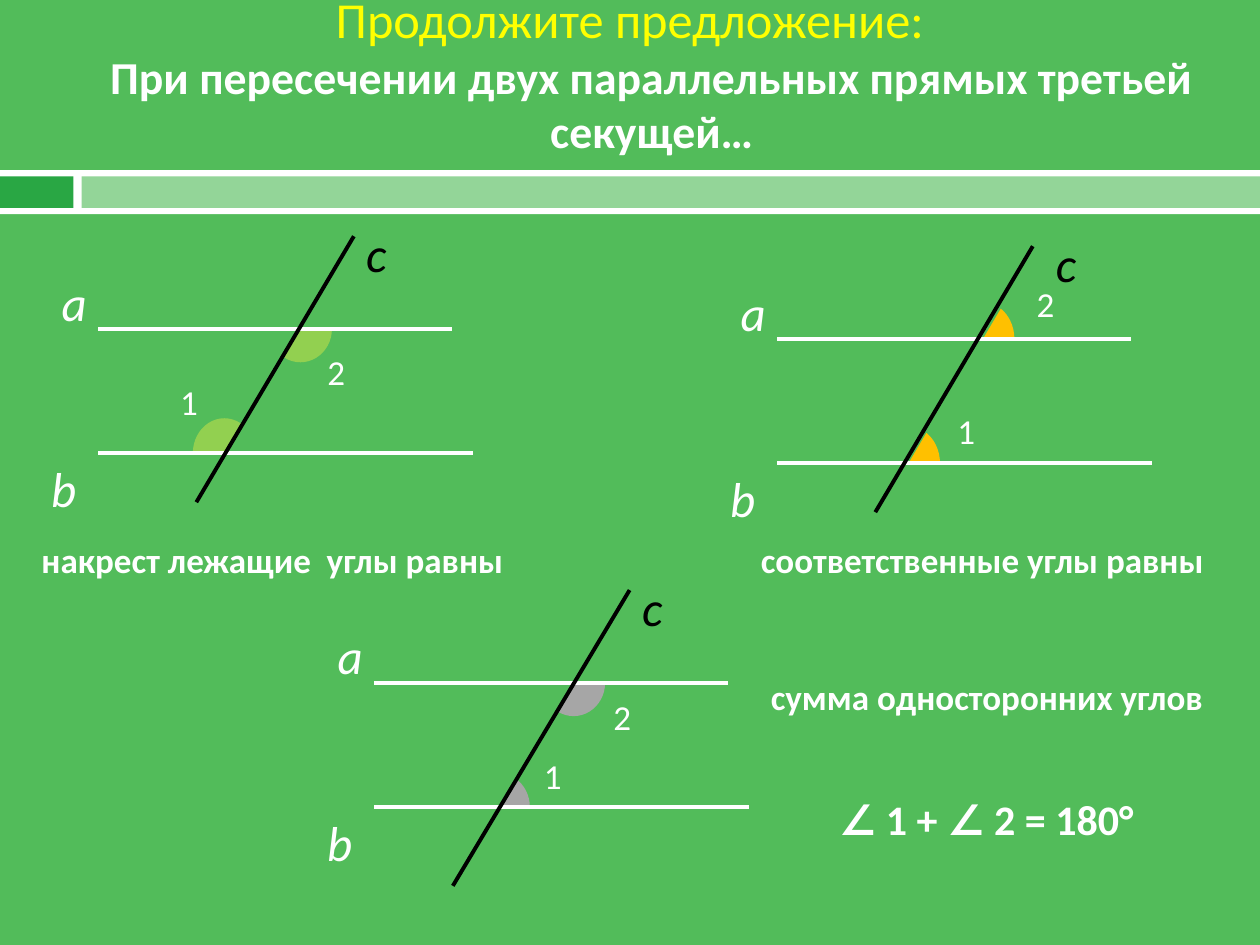
import dataclasses
import math

import pptx
import pptx.dml.color
import pptx.enum.shapes
import pptx.enum.text
import pptx.oxml.ns
import pptx.util
from lxml import etree

Pt = pptx.util.Pt


@dataclasses.dataclass(frozen=True)
class Theme:
    """Colours, font and type sizes of the slide."""
    background: str = "52BC5A"
    white: str = "FFFFFF"
    black: str = "000000"
    yellow: str = "FFFF00"
    dark_green: str = "29A744"
    pale_green: str = "93D598"
    lime: str = "92D050"
    orange: str = "FFC000"
    grey: str = "A6A6A6"
    font: str = "Calibri"
    title_size: float = 28.8
    statement_size: float = 26.1
    line_name_size: float = 28
    formula_size: float = 24
    text_size: float = 20
    line_width: float = 2.25


THEME = Theme()


@dataclasses.dataclass(frozen=True)
class Angle:
    """A marked angle: number, label position, vertex, radii and arc ends."""
    number: str
    label: tuple
    vertex: tuple
    radii: tuple
    ends: tuple


def color(value):
    """Turn a hex string into a colour."""
    return pptx.dml.color.RGBColor.from_string(value)


def apply_format(target, values):
    """Set each attribute named in a dict of format values."""
    for name, value in values.items():
        setattr(target, name, value)


def format_font(font, size, fill, **extra):
    """Give a font the theme typeface, a size, a colour and extra attributes."""
    apply_format(font, {"name": THEME.font, "size": Pt(size), "bold": False, **extra})
    font.color.rgb = color(fill)


def add_text(slide, text, box, size, fill=THEME.white, **extra):
    """Add a one-paragraph text box."""
    shape = slide.shapes.add_textbox(*map(Pt, box))
    apply_format(shape.text_frame, {
        "word_wrap": True,
        "auto_size": pptx.enum.text.MSO_AUTO_SIZE.SHAPE_TO_FIT_TEXT})
    run = shape.text_frame.paragraphs[0].add_run()
    run.text = text
    format_font(run.font, size, fill, **extra)


def add_filled(slide, kind, box, fill):
    """Add a preset shape with a solid fill and no outline."""
    shape = slide.shapes.add_shape(kind, *map(Pt, box))
    shape.shadow.inherit = False
    shape.fill.solid()
    shape.fill.fore_color.rgb = color(fill)
    shape.line.fill.background()
    return shape


def add_line(slide, start, end, fill):
    """Add a straight line without a shadow."""
    line = slide.shapes.add_connector(
        pptx.enum.shapes.MSO_CONNECTOR.STRAIGHT, *map(Pt, (*start, *end)))
    line.line.width = Pt(THEME.line_width)
    line.line.color.rgb = color(fill)
    etree.SubElement(line._element.spPr, pptx.oxml.ns.qn("a:effectLst"))


def add_title(slide, box):
    """Place the heading and the statement to be completed."""
    title = slide.shapes.title
    left, top, width, height = map(Pt, box)
    apply_format(title, {"left": left, "top": top, "width": width, "height": height})
    apply_format(title.text_frame, {
        "word_wrap": True,
        "auto_size": pptx.enum.text.MSO_AUTO_SIZE.NONE,
        "vertical_anchor": pptx.enum.text.MSO_ANCHOR.MIDDLE,
        "margin_top": 0, "margin_bottom": Pt(35.6)})
    paragraph = title.text_frame.paragraphs[0]
    apply_format(paragraph, {"alignment": pptx.enum.text.PP_ALIGN.CENTER,
                             "space_before": Pt(0), "line_spacing": 1.0})
    properties = paragraph._p.get_or_add_pPr()
    properties.set("marL", str(Pt(25)))
    properties.set("indent", str(-Pt(25)))
    heading = paragraph.add_run()
    heading.text = "Продолжите предложение:"
    format_font(heading.font, THEME.title_size, THEME.yellow)
    paragraph.add_line_break()
    statement = paragraph.add_run()
    statement.text = "При пересечении двух параллельных прямых третьей секущей…"
    format_font(statement.font, THEME.statement_size, THEME.white, bold=True)


def add_band(slide, box):
    """Draw the white band with its dark and pale bars."""
    left, top, width, height = box
    rectangle = pptx.enum.shapes.MSO_SHAPE.RECTANGLE
    bar_top, bar_height, split, gap = top + 3.6, height - 7.2, 42, 4.6
    add_filled(slide, rectangle, box, THEME.white)
    add_filled(slide, rectangle, (left, bar_top, split, bar_height), THEME.dark_green)
    add_filled(slide, rectangle,
               (left + split + gap, bar_top, width - split - gap, bar_height),
               THEME.pale_green)


def add_diagram(slide, origin, fill, angles, secant_end=(56, 99), secant_label=146):
    """Draw lines a and b, the secant c and two angles, from the left end of a."""
    left, top = origin

    def at(x, y, *size):
        return (left + x, top + y, *size)

    for angle in angles:
        (x, y), (across, down) = angle.vertex, angle.radii
        sector = add_filled(slide, pptx.enum.shapes.MSO_SHAPE.ARC,
                            at(x - across, y - down, 2 * across, 2 * down), fill)
        for index, degrees in enumerate(angle.ends):
            sector.adjustments[index] = degrees * 0.6
    for y, length in ((0, 202), (71, 214)):
        add_line(slide, at(0, y), at(length, y), THEME.white)
    add_line(slide, at(146, -53), at(*secant_end), THEME.black)
    for name, x, y, width, ink in (("а", -28, -36, 22, THEME.white),
                                   ("b", -34, 70.5, 22, THEME.white),
                                   ("c", secant_label, -64, 40, THEME.black)):
        add_text(slide, name, at(x, y, width, 41), THEME.line_name_size, ink, italic=True)
    for angle in angles:
        add_text(slide, angle.number, at(*angle.label, 36, 32), THEME.text_size)


def main():
    """Build the slide and save it."""
    presentation = pptx.Presentation()
    presentation.slide_width, presentation.slide_height = Pt(720), Pt(540)
    slide = presentation.slides.add_slide(presentation.slide_layouts[5])
    slide.background.fill.solid()
    slide.background.fill.fore_color.rgb = color(THEME.background)

    add_title(slide, (0, 11.5, 720, 96))
    add_band(slide, (0, 97.2, 720, 25.2))

    slope = math.degrees(math.atan2(152, 90))
    upper_left, lower_right = (180, 360 - slope), (0, 180 - slope)
    upper_right = (360 - slope, 0)
    add_diagram(slide, (56.2, 188), THEME.lime, (
        Angle("1", (39.6, 25.9), (72, 71), (18, 20), upper_left),
        Angle("2", (123.8, 8.6), (115.5, 0), (18, 19), lower_right)))
    add_diagram(slide, (444.2, 193.7), THEME.orange, (
        Angle("1", (95.8, 36.7), (75, 71), (18, 21), upper_right),
        Angle("2", (141.1, -36), (117.5, 0), (18, 21), upper_right)),
        secant_label=152)
    add_diagram(slide, (213.8, 390.2), THEME.grey, (
        Angle("1", (90, 37.4), (72, 71), (17, 19), upper_right),
        Angle("2", (129.6, 3.6), (114, 0), (18, 19), lower_right)),
        secant_end=(45, 116))

    for text, box, size in (
            ("накрест лежащие  углы равны", (16.6, 304, 286.6, 32), THEME.text_size),
            ("соответственные углы равны", (427.7, 304, 275.8, 32), THEME.text_size),
            ("сумма односторонних углов", (433.4, 382.5, 270, 32), THEME.text_size),
            ("∠ 1 + ∠ 2 = 180°", (472.3, 450, 232.6, 36), THEME.formula_size)):
        add_text(slide, text, box, size, bold=True)

    presentation.save("out.pptx")


if __name__ == "__main__":
    main()
